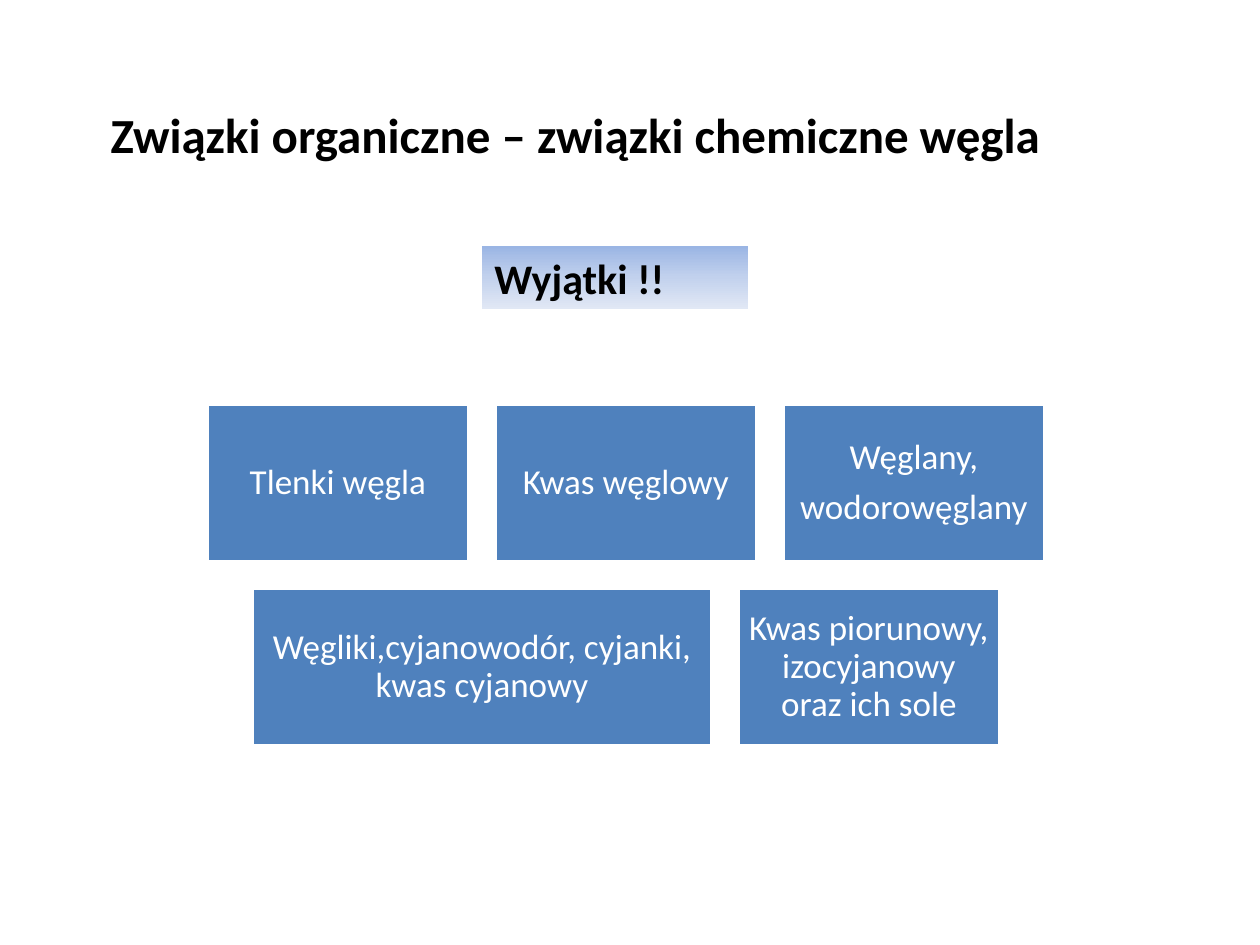
"""Builds a slide on the carbon compounds that are not organic."""
from copy import deepcopy

from pptx import Presentation
from pptx.dml.color import RGBColor
from pptx.enum.shapes import MSO_SHAPE
from pptx.enum.text import MSO_ANCHOR, MSO_AUTO_SIZE, PP_ALIGN
from pptx.util import Emu, Pt

RECT = MSO_SHAPE.RECTANGLE
TOP, MIDDLE = MSO_ANCHOR.TOP, MSO_ANCHOR.MIDDLE
LEFT, CENTER = PP_ALIGN.LEFT, PP_ALIGN.CENTER
GROW, FIXED = MSO_AUTO_SIZE.SHAPE_TO_FIT_TEXT, MSO_AUTO_SIZE.NONE

SCALE = 914400 / 126
FONT = "Calibri"
BLACK = RGBColor(0x00, 0x00, 0x00)
WHITE = RGBColor(0xFF, 0xFF, 0xFF)
BLUE = RGBColor(0x4F, 0x81, 0xBD)
FADE = (
    (0, RGBColor(0x9A, 0xB5, 0xE4)),
    (0.5, RGBColor(0xC2, 0xD1, 0xED)),
    (1, RGBColor(0xE1, 0xE8, 0xF5)),
)

MID, START, HIGH, GAP = 626, 404, 158, 26
ROWS = (
    (("Tlenki węgla", 262), ("Kwas węglowy", 262),
     ("Węglany,\nwodorowęglany", 262)),
    (("Węgliki,cyjanowodór, cyjanki, kwas cyjanowy", 460),
     ("Kwas piorunowy, izocyjanowy oraz ich sole", 262)),
)


def px(num):
    return Emu(round(num * SCALE))


def write(shape, text, size, color=BLACK, bold=False, align=LEFT,
          anchor=TOP, fit=GROW, pad=None, line=None, after=None):
    frame = shape.text_frame
    frame.word_wrap = True
    frame.auto_size = fit
    frame.vertical_anchor = anchor
    if pad is not None:
        frame.margin_left = frame.margin_right = px(pad)
        frame.margin_top = frame.margin_bottom = px(pad)
    frame.text = text
    for para in frame.paragraphs:
        para.alignment = align
        para.line_spacing = line
        para.space_after = after
        for run in para.runs:
            font = run.font
            font.name, font.size, font.bold = FONT, Pt(size), bold
            font.color.rgb = color


def add_rect(slide, left, top, width, height):
    shape = slide.shapes.add_shape(
        RECT, px(left), px(top), px(width), px(height))
    shape.shadow.inherit = False
    return shape


def add_title(slide, text):
    title = slide.shapes.title
    title.left, title.top = px(98), px(98)
    title.width, title.height = px(1063), px(72)
    write(title, text, 28, bold=True)


def add_label(slide, text):
    label = add_rect(slide, 482, 246, 266, 63)
    label.line.fill.background()
    fill = label.fill
    fill.gradient()
    fill.gradient_angle = 270
    stops = label._element.spPr.find(".//{*}gsLst")
    stops.append(deepcopy(stops[-1]))
    for stop, (place, color) in zip(fill.gradient_stops, FADE):
        stop.position = place
        stop.color.rgb = color
    write(label, text, 24, bold=True)


def add_box(slide, text, left, top, width):
    box = add_rect(slide, left, top, width, HIGH)
    box.fill.solid()
    box.fill.fore_color.rgb = BLUE
    box.line.color.rgb = WHITE
    box.line.width = Pt(2)
    write(box, text, 20, color=WHITE, align=CENTER, anchor=MIDDLE,
          fit=FIXED, pad=10, line=0.9, after=Pt(7))


def add_row(slide, row, top):
    total = sum(width for _, width in row) + GAP * (len(row) - 1)
    left = MID - total // 2
    for text, width in row:
        add_box(slide, text, left, top, width)
        left += width + GAP


def main():
    deck = Presentation()
    deck.slide_width, deck.slide_height = px(1260), px(945)
    slide = deck.slides.add_slide(deck.slide_layouts[5])
    for num, row in enumerate(ROWS):
        add_row(slide, row, START + num * (HIGH + GAP))
    add_title(slide, "Związki organiczne – związki chemiczne węgla")
    add_label(slide, "Wyjątki !!")
    deck.save("out.pptx")


if __name__ == "__main__":
    main()
